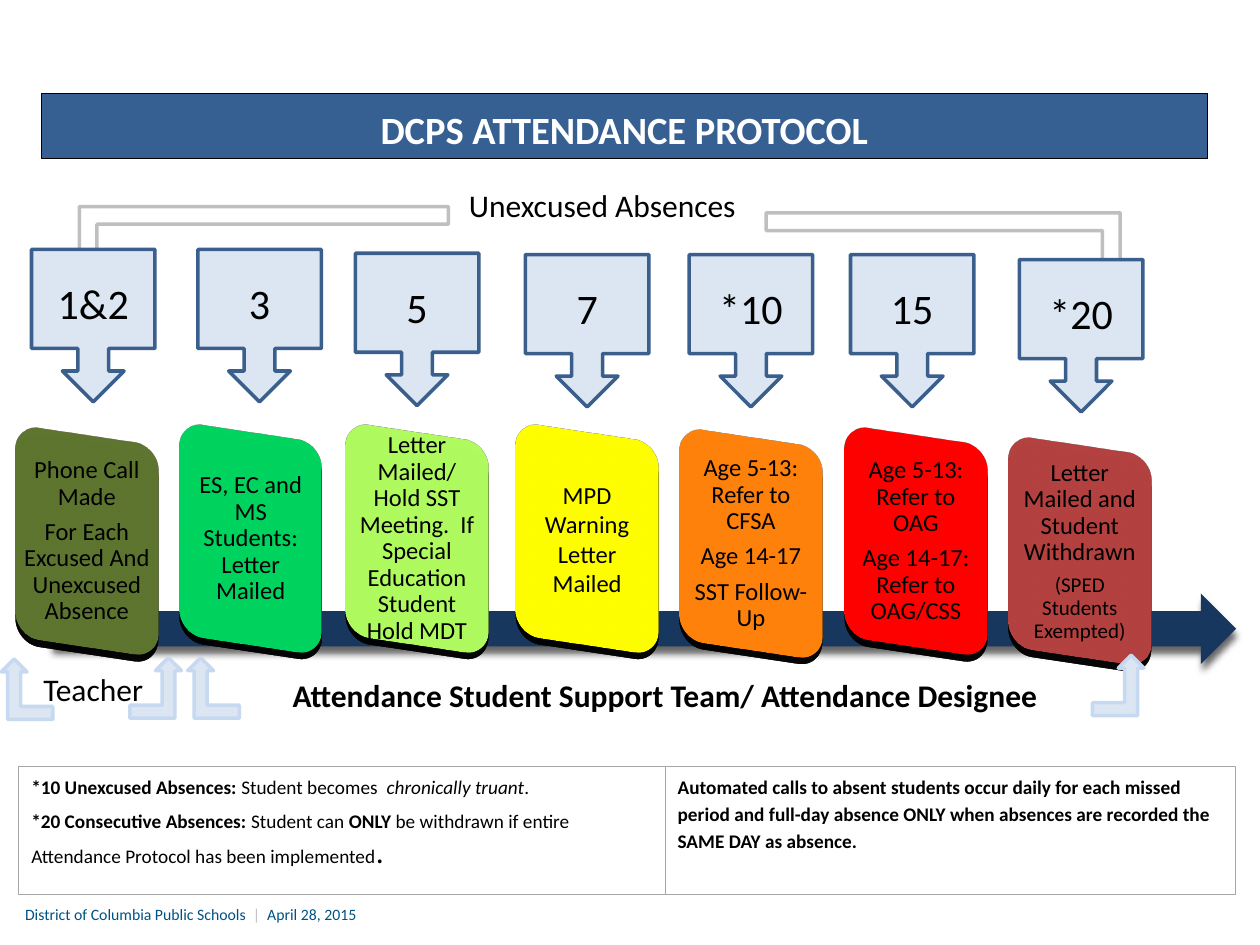
from dataclasses import dataclass, field

import pptx
import pptx.dml.color
import pptx.enum.shapes
import pptx.enum.text
import pptx.oxml
import pptx.oxml.ns
import pptx.util
from lxml import etree

Inches = pptx.util.Inches
Pt = pptx.util.Pt
RGBColor = pptx.dml.color.RGBColor
SHAPE = pptx.enum.shapes.MSO_SHAPE
ALIGN = pptx.enum.text.PP_ALIGN
ANCHOR = pptx.enum.text.MSO_ANCHOR
qn = pptx.oxml.ns.qn

BLACK = RGBColor(0x00, 0x00, 0x00)
WHITE = RGBColor(0xFF, 0xFF, 0xFF)
BANNER = RGBColor(0x37, 0x60, 0x92)
NAVY = RGBColor(0x17, 0x37, 0x5E)
PALE = RGBColor(0xDC, 0xE6, 0xF2)
PALE_EDGE = RGBColor(0xC6, 0xD9, 0xF1)
CALLOUT_EDGE = RGBColor(0x3A, 0x5F, 0x8C)
GREY = RGBColor(0xBF, 0xBF, 0xBF)
NOTE_EDGE = RGBColor(0xA6, 0xA6, 0xA6)
FOOTER = RGBColor(0x00, 0x52, 0x83)
OLIVE = RGBColor(0x4F, 0x62, 0x28)
GREEN = RGBColor(0x00, 0xB0, 0x50)
LIME = RGBColor(0x92, 0xD0, 0x50)
YELLOW = RGBColor(0xFF, 0xFF, 0x00)
ORANGE = RGBColor(0xE4, 0x6C, 0x0A)
RED = RGBColor(0xFF, 0x00, 0x00)
BRICK = RGBColor(0x95, 0x37, 0x35)


@dataclass
class Span:
    text: str
    size: float = 14
    color: RGBColor = BLACK
    bold: bool = False
    italic: bool = False


@dataclass
class Para:
    spans: list[Span]
    layout: dict = field(default_factory=dict)


@dataclass
class Step:
    """One stage: the absence count above and the action card below."""
    count: str
    callout_at: tuple[float, float]
    card_at: tuple[float, float]
    color: RGBColor
    paras: list[Para]


@dataclass
class Bent:
    box: tuple[float, float, float, float]
    flips: tuple[str, ...]
    fill: RGBColor
    edge: RGBColor


def centred(line: float, after: float, before: float = 0) -> dict:
    return {"alignment": ALIGN.CENTER, "line_spacing": line,
            "space_before": Pt(before), "space_after": Pt(after)}


CARD = centred(0.9, 5)
PLAIN = centred(1.0, 0)
LABEL = centred(1.15, 10)


def actions(*texts: str, layout: dict = CARD) -> list[Para]:
    return [Para([Span(text)], layout) for text in texts]


STEPS = [
    Step("1&2", (0.25, 1.98), (0.06, 3.41), OLIVE,
         actions("Phone Call Made", "For Each Excused And Unexcused Absence")),
    Step("3", (1.57, 1.98), (1.36, 3.39), GREEN,
         actions("ES, EC and MS Students: Letter Mailed")),
    Step("5", (2.82, 2.01), (2.68, 3.39), LIME,
         actions("Letter Mailed/ Hold SST Meeting.  If Special Education Student Hold MDT")),
    Step("7", (4.17, 2.02), (4.03, 3.39), YELLOW,
         actions("MPD", "Warning Letter Mailed", layout=PLAIN)),
    Step("*10", (5.47, 2.02), (5.33, 3.43), ORANGE,
         actions("Age 5-13: Refer to CFSA", "Age 14-17", "SST Follow-Up")),
    Step("15", (6.75, 2.02), (6.64, 3.41), RED,
         actions("Age 5-13: Refer to OAG", "Age 14-17: Refer to OAG/CSS")),
    Step("*20", (8.09, 2.06), (7.94, 3.49), BRICK,
         actions("Letter Mailed and Student Withdrawn")
         + [Para([Span("(SPED Students Exempted)", 12)], CARD)]),
]
BRACKETS = [
    Bent((6.08, 1.69, 2.88, 0.56), ("flipV",), WHITE, GREY),
    Bent((0.56, 1.64, 3, 0.56), ("flipH", "flipV"), WHITE, GREY),
]
POINTERS = [
    Bent((left, top, 0.41, 0.48), flips, PALE, PALE_EDGE)
    for left, top, flips in [(1.03, 5.22, ()), (0.01, 5.23, ("flipH",)),
                             (1.49, 5.22, ("flipH",)), (8.67, 5.2, ())]
]
NOTE_LEFT = [
    Para([Span("*10 Unexcused Absences:", 11, bold=True), Span(" Student becomes  ", 11),
          Span("chronically truant", 11, italic=True), Span(".", 11)],
         {"line_spacing": 1.15, "space_after": Pt(6)}),
    Para([Span("*20 Consecutive Absences:", 11, bold=True), Span(" Student can ", 11),
          Span("ONLY", 11, bold=True),
          Span(" be withdrawn if entire Attendance Protocol has been implemented", 11),
          Span(".", 18)]),
]
NOTE_RIGHT = [
    Para([Span("Automated calls to absent students occur daily for each missed period and "
               "full-day absence ONLY when absences are recorded the SAME DAY as absence.",
               11, bold=True)],
         {"line_spacing": 1.15, "space_before": Pt(12), "space_after": Pt(10)}),
]


def write(shape, paras: list[Para], anchor=ANCHOR.TOP, inset: float | None = None) -> None:
    frame = shape.text_frame
    frame.word_wrap, frame.vertical_anchor = True, anchor
    if inset is not None:
        for side in ("left", "top", "right", "bottom"):
            setattr(frame, f"margin_{side}", Inches(inset))
    for index, source in enumerate(paras):
        para = frame.add_paragraph() if index else frame.paragraphs[0]
        for name, value in ({"alignment": ALIGN.LEFT} | source.layout).items():
            setattr(para, name, value)
        for span in source.spans:
            run = para.add_run()
            run.text = span.text
            run.font.color.rgb = span.color
            for name, value in {"name": "Calibri", "size": Pt(span.size),
                                "bold": span.bold, "italic": span.italic}.items():
                setattr(run.font, name, value)


def paint(shape, fill: RGBColor, edge: RGBColor | None, width: float = 0.5) -> None:
    shape.fill.solid()
    shape.fill.fore_color.rgb = fill
    if edge is None:
        shape.line.fill.background()
    else:
        shape.line.color.rgb = edge
        shape.line.width = Pt(width)


def add_block(page, kind, box, fill, edge, width=0.5):
    shape = page.shapes.add_shape(kind, *map(Inches, box))
    shape.shadow.inherit = False
    paint(shape, fill, edge, width)
    return shape


def cast_shadow(shape) -> None:
    effects = shape._element.spPr.find(qn("a:effectLst"))
    shadow = etree.SubElement(effects, qn("a:outerShdw"), blurRad=str(Pt(4)),
                              dist=str(Pt(4)), dir="5400000", rotWithShape="0")
    color = etree.SubElement(shadow, qn("a:srgbClr"), val="000000")
    etree.SubElement(color, qn("a:alpha"), val="60000")


def tilt(shape) -> None:
    """Turn the shape in space, so its right side hangs lower than its left."""
    properties = shape._element.spPr
    scene = etree.SubElement(properties, qn("a:scene3d"))
    etree.SubElement(scene, qn("a:camera"), prst="isometricOffAxis2Left", zoom="95000")
    etree.SubElement(scene, qn("a:lightRig"), rig="flat", dir="t")
    etree.SubElement(properties, qn("a:sp3d"), prstMaterial="matte")


def add_bent(page, bent: Bent) -> None:
    shape = add_block(page, SHAPE.BENT_UP_ARROW, bent.box, bent.fill, bent.edge, 2)
    for flip in bent.flips:
        shape._element.spPr.xfrm.set(flip, "1")


def add_card(page, step: Step) -> None:
    left, top = step.card_at
    card = add_block(page, SHAPE.ROUNDED_RECTANGLE, (left, top, 1.26, 1.77),
                     step.color, WHITE, 2)
    cast_shadow(card)
    tilt(card)
    box = page.shapes.add_textbox(*map(Inches, (left + 0.06, top + 0.06, 1.14, 1.65)))
    write(box, step.paras, ANCHOR.MIDDLE, 0.06)


def add_label(page, box, text: str, bold: bool = False, layout: dict = LABEL) -> None:
    label = add_block(page, SHAPE.RECTANGLE, box, WHITE, WHITE)
    write(label, [Para([Span(text, 18, bold=bold)], layout)])


def main() -> None:
    deck = pptx.Presentation()
    deck.slide_width, deck.slide_height = Inches(10), Inches(7.5)
    page = deck.slides.add_slide(deck.slide_layouts[5])

    title = page.shapes.title
    for name, value in zip(("left", "top", "width", "height"), (0.33, 0.74, 9.25, 0.52)):
        setattr(title, name, Inches(value))
    paint(title, BANNER, BLACK)
    title.text_frame.auto_size = pptx.enum.text.MSO_AUTO_SIZE.NONE
    write(title, [Para([Span("DCPS ATTENDANCE PROTOCOL", 22, WHITE, True)], centred(1.15, 12))])

    add_label(page, (0.22, 5.22, 1.04, 0.39), "Teacher", layout=centred(1.15, 6))
    timeline = add_block(page, SHAPE.RIGHT_ARROW, (0.42, 4.71, 9.39, 0.56), NAVY, None)
    cast_shadow(timeline)
    for step in STEPS:
        add_card(page, step)
    for bent in BRACKETS + POINTERS[:2]:
        add_bent(page, bent)
    add_label(page, (2.05, 5.27, 6.46, 0.69),
              "Attendance Student Support Team/ Attendance Designee", bold=True)
    add_label(page, (3.59, 1.38, 2.38, 0.69), "Unexcused Absences")
    for step in STEPS:
        callout = add_block(page, SHAPE.DOWN_ARROW_CALLOUT, (*step.callout_at, 0.98, 1.21),
                            PALE, CALLOUT_EDGE, 2)
        write(callout, [Para([Span(step.count, 24)], centred(1.15, 10, 12))], ANCHOR.MIDDLE)
    for left, width, paras in [(0.15, 5.14, NOTE_LEFT), (5.28, 4.53, NOTE_RIGHT)]:
        note = add_block(page, SHAPE.RECTANGLE, (left, 6.08, width, 1.02), WHITE, NOTE_EDGE)
        write(note, paras)
    for bent in POINTERS[2:]:
        add_bent(page, bent)

    footer = page.shapes.add_textbox(*map(Inches, (0.1, 7.13, 6.92, 0.25)))
    write(footer, [Para([Span("District of Columbia Public Schools  ", 9, FOOTER),
                         Span("|  ", 9, GREY), Span("April 28, 2015", 9, FOOTER)])])
    deck.save("out.pptx")


if __name__ == "__main__":
    main()
